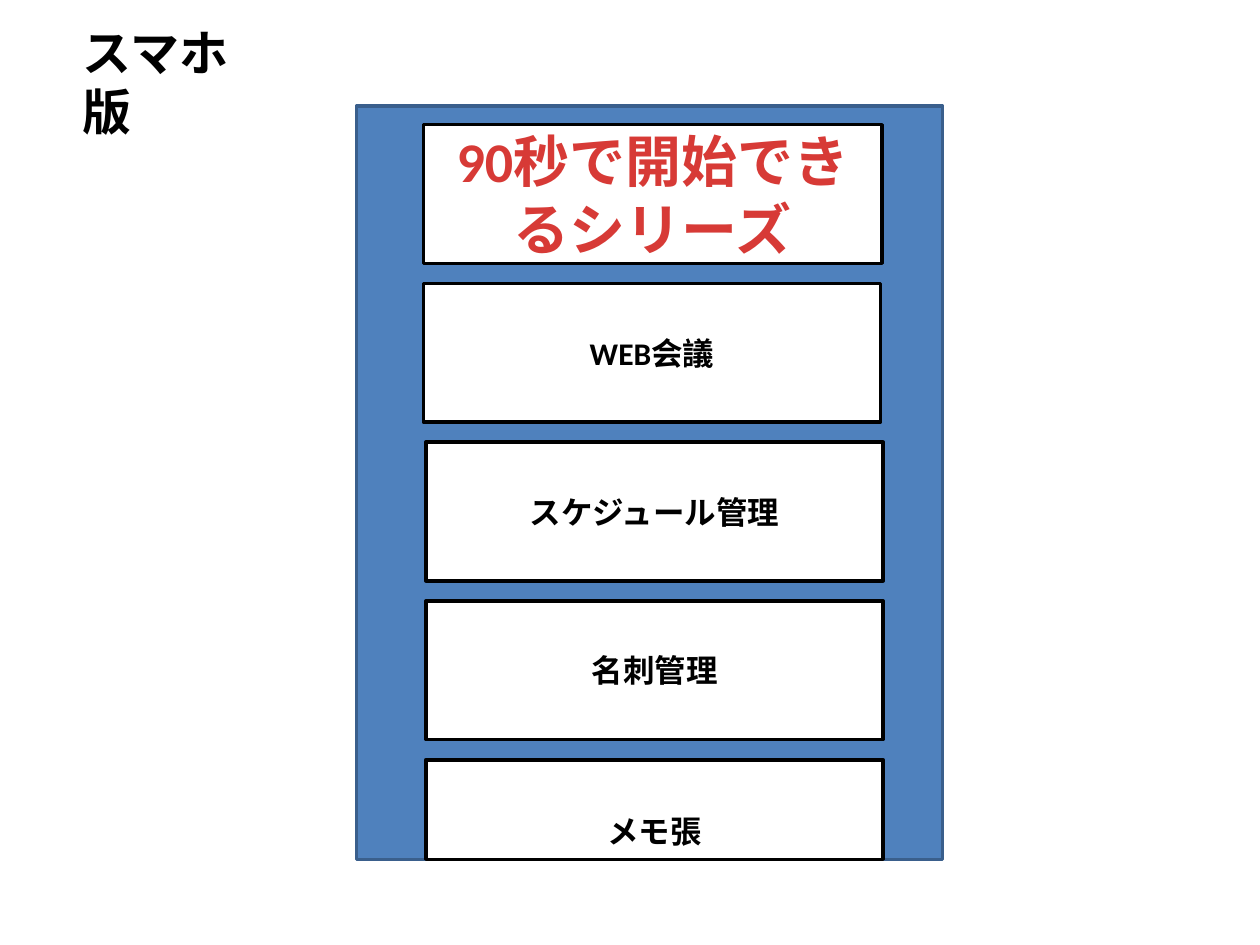
from dataclasses import dataclass

from pptx import Presentation
from pptx.dml.color import RGBColor
from pptx.enum.shapes import MSO_SHAPE
from pptx.enum.text import MSO_ANCHOR, PP_ALIGN
from pptx.util import Inches, Pt

RECTANGLE = MSO_SHAPE.RECTANGLE
MIDDLE = MSO_ANCHOR.MIDDLE
CENTER = PP_ALIGN.CENTER


@dataclass(frozen=True)
class Theme:
    font: str = "Calibri"
    black: str = "000000"
    white: str = "FFFFFF"
    red: str = "D73A36"
    blue: str = "4F81BD"
    dark_blue: str = "3A5F8C"
    title_size: int = 28
    heading_size: int = 32
    label_size: int = 18
    line_width: int = 2


class SlideBuilder:
    def __init__(self, slide, theme):
        self.slide = slide
        self.theme = theme

    def add_text(self, frame, text, size, color):
        paragraph = frame.paragraphs[0]
        run = paragraph.add_run()
        run.text = text
        values = {"name": self.theme.font, "size": Pt(size), "bold": True}
        for name, value in values.items():
            setattr(run.font, name, value)
        run.font.color.rgb = RGBColor.from_string(color)
        return paragraph

    def rectangle(self, left, top, width, height, fill, line):
        shape = self.slide.shapes.add_shape(
            RECTANGLE, Inches(left), Inches(top), Inches(width), Inches(height)
        )
        shape.shadow.inherit = False
        shape.fill.solid()
        shape.fill.fore_color.rgb = RGBColor.from_string(fill)
        shape.line.color.rgb = RGBColor.from_string(line)
        shape.line.width = Pt(self.theme.line_width)
        return shape

    def button(self, left, top, width, height, text, size, color, margin_top=0.05):
        shape = self.rectangle(
            left, top, width, height, self.theme.white, self.theme.black
        )
        values = {
            "word_wrap": True,
            "vertical_anchor": MIDDLE,
            "margin_top": Inches(margin_top),
        }
        for name, value in values.items():
            setattr(shape.text_frame, name, value)
        self.add_text(shape.text_frame, text, size, color).alignment = CENTER

    def title(self, left, top, width, height, text):
        shape = self.slide.shapes.add_textbox(
            Inches(left), Inches(top), Inches(width), Inches(height)
        )
        shape.text_frame.word_wrap = True
        self.add_text(shape.text_frame, text, self.theme.title_size, self.theme.black)


def main():
    """Build the smartphone menu slide."""
    presentation = Presentation()
    presentation.slide_width = Inches(10)
    presentation.slide_height = Inches(7.5)
    theme = Theme()
    slide = presentation.slides.add_slide(presentation.slide_layouts[6])
    builder = SlideBuilder(slide, theme)

    screen_top, screen_height = 0.84, 5.98
    screen_bottom = screen_top + screen_height
    builder.rectangle(
        2.83, screen_top, 4.65, screen_height, theme.blue, theme.dark_blue
    )

    first_top, pitch, button_height = 0.99, 1.26, 1.1
    label = (theme.label_size, theme.black)
    buttons = [
        (3.36, 3.64, "90秒で開始できるシリーズ", theme.heading_size, theme.red),
        (3.36, 3.63, "WEB会議", *label),
        (3.38, 3.63, "スケジュール管理", *label),
        (3.38, 3.63, "名刺管理", *label),
        (3.38, 3.63, "メモ張", *label, 0.38),
    ]
    for index, (left, width, *content) in enumerate(buttons):
        top = first_top + index * pitch
        height = min(button_height, screen_bottom - top)
        builder.button(left, top, width, height, *content)

    builder.title(0.56, 0.13, 1.67, 0.57, "スマホ版")
    presentation.save("out.pptx")


if __name__ == "__main__":
    main()
